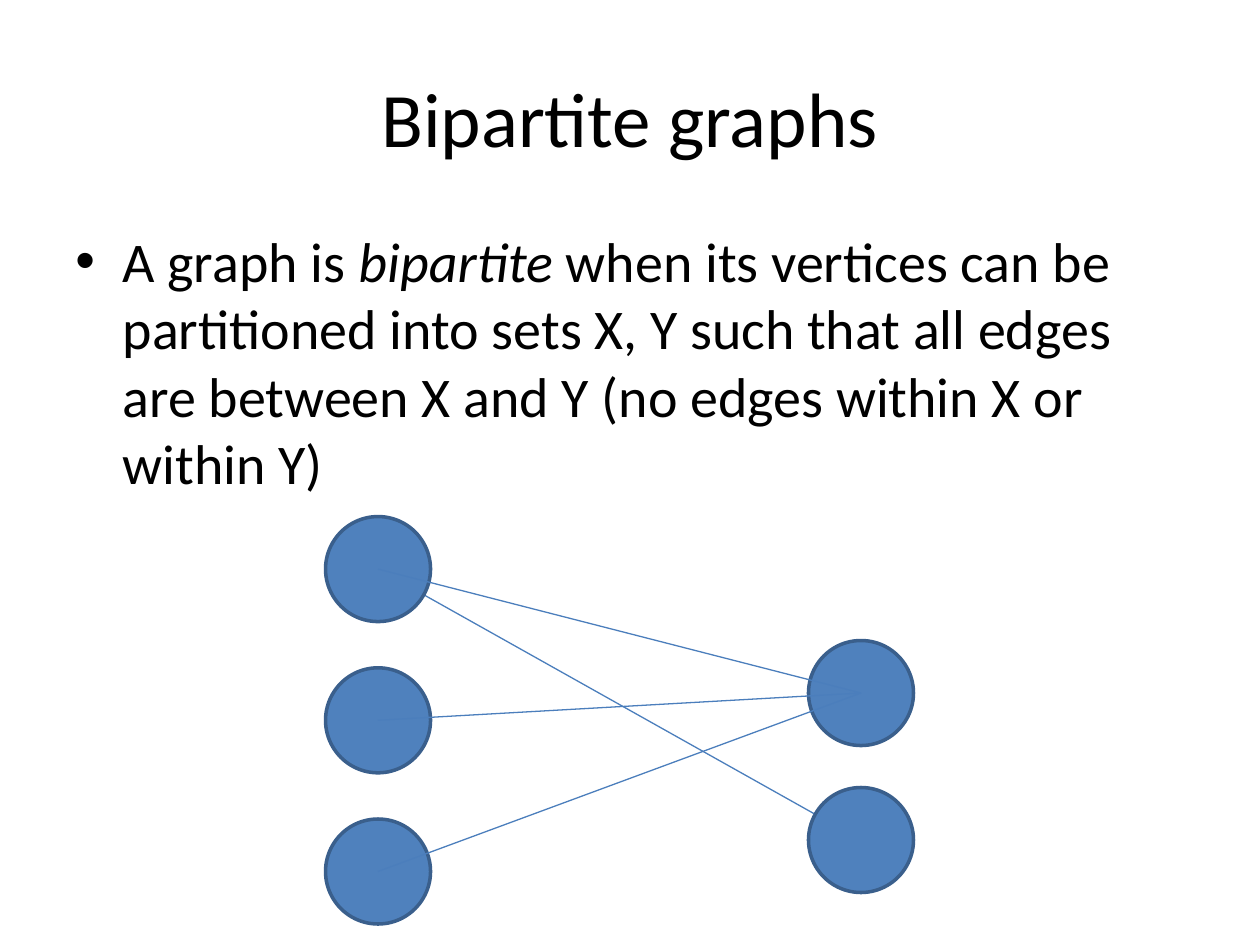
from typing import NamedTuple

from lxml.etree import SubElement
from pptx import Presentation
from pptx.dml.color import RGBColor
from pptx.enum.shapes import MSO_CONNECTOR as Link, MSO_SHAPE as Kind
from pptx.enum.text import MSO_ANCHOR as Anchor, PP_ALIGN as Align
from pptx.oxml.ns import qn
from pptx.util import Pt

BLACK = RGBColor(0x00, 0x00, 0x00)
BLUE = RGBColor(0x4F, 0x81, 0xBD)
RIM = RGBColor(0x3A, 0x5F, 0x8C)
EDGE = RGBColor(0x4B, 0x7E, 0xBC)
FONT = "Calibri"
SIZE = 60


class Node(NamedTuple):
    x: float
    y: float


class Edge(NamedTuple):
    start: Node
    end: Node


X_SET = [Node(216, 325.2 + 86.4 * row) for row in range(3)]
Y_SET = [Node(492, 396 + 84 * row) for row in range(2)]
BACK = [Edge(X_SET[0], Y_SET[1])]
FRONT = [Edge(X_SET[2], Y_SET[0]), Edge(X_SET[1], Y_SET[0]), Edge(X_SET[0], Y_SET[0])]


def add_text(slide, top: float, height: float, parts: list[str], size: float):
    """Add a full-width text box and return its frame."""
    frame = slide.shapes.add_textbox(Pt(36), Pt(top), Pt(648), Pt(height)).text_frame
    frame.word_wrap = True
    para = frame.paragraphs[0]
    for part in parts:
        run = para.add_run()
        run.text = part
        run.font.name, run.font.size = FONT, Pt(size)
        run.font.color.rgb = BLACK
    return frame


def add_bullet(para) -> None:
    """Give a paragraph a hanging bullet and relative space before."""
    props = para._p.get_or_add_pPr()
    props.set("marL", str(Pt(27)))
    props.set("indent", str(Pt(-27)))
    space = SubElement(props, qn("a:spcBef"))
    SubElement(space, qn("a:spcPct")).set("val", "20000")
    SubElement(props, qn("a:buFont")).set("typeface", "Arial")
    SubElement(props, qn("a:buChar")).set("char", "•")


def add_edge(slide, edge: Edge) -> None:
    """Draw a thin line between two node centres."""
    ends = [Pt(value) for node in edge for value in node]
    line = slide.shapes.add_connector(Link.STRAIGHT, *ends)
    line.line.color.rgb = EDGE
    line.line.width = Pt(0.75)
    SubElement(line._element.spPr, qn("a:effectLst"))


def add_node(slide, node: Node) -> None:
    """Draw a circle around a node centre."""
    left, top = node.x - SIZE / 2, node.y - SIZE / 2
    disc = slide.shapes.add_shape(Kind.OVAL, Pt(left), Pt(top), Pt(SIZE), Pt(SIZE))
    disc.shadow.inherit = False
    disc.fill.solid()
    disc.fill.fore_color.rgb = BLUE
    disc.line.color.rgb = RIM
    disc.line.width = Pt(2)


def main() -> None:
    """Build the slide on bipartite graphs."""
    deck = Presentation()
    deck.slide_width, deck.slide_height = Pt(720), Pt(540)
    slide = deck.slides.add_slide(deck.slide_layouts[6])

    title = add_text(slide, 21.6, 90, ["Bipartite graphs"], 44)
    title.vertical_anchor = Anchor.MIDDLE
    title.paragraphs[0].alignment = Align.CENTER

    parts = [
        "A graph is ",
        "bipartite",
        " when its vertices can be partitioned into sets X, Y such that "
        "all edges are between X and Y (no edges within X or within Y)",
    ]
    para = add_text(slide, 126, 174, parts, 32).paragraphs[0]
    para.runs[1].font.italic = True
    add_bullet(para)

    for edge in BACK:
        add_edge(slide, edge)
    for node in X_SET + Y_SET:
        add_node(slide, node)
    for edge in FRONT:
        add_edge(slide, edge)
    deck.save("out.pptx")


if __name__ == "__main__":
    main()
